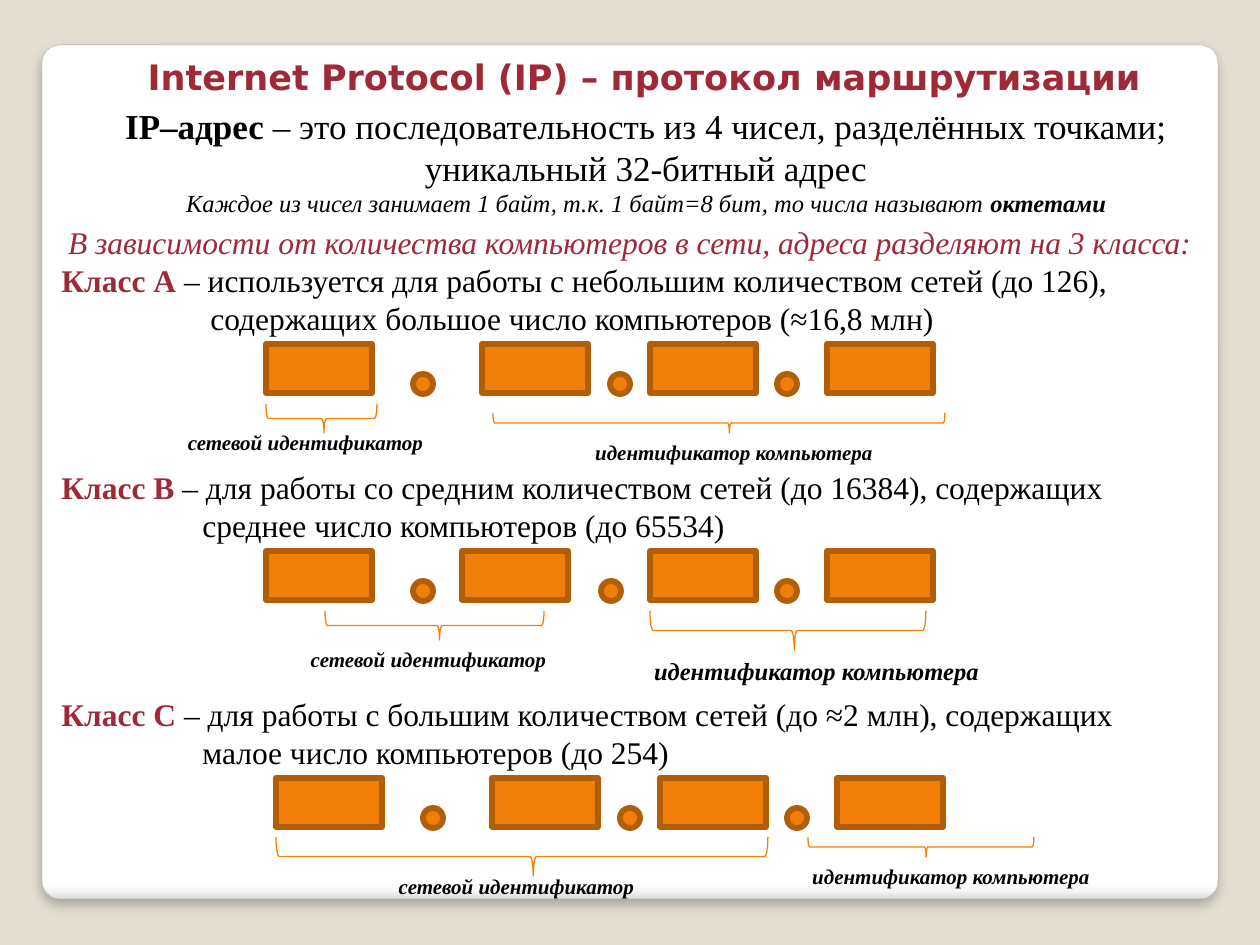
"""Build a slide on IP addresses and their three classes."""
from lxml.etree import fromstring
from pptx import Presentation
from pptx.dml.color import RGBColor
from pptx.enum.shapes import MSO_SHAPE
from pptx.enum.text import MSO_AUTO_SIZE, PP_ALIGN
from pptx.util import Emu, Pt

SAND = RGBColor(0xE3, 0xDE, 0xD1)
GREY = RGBColor(0xA4, 0xA4, 0xA4)
WINE = RGBColor(0x9F, 0x29, 0x36)
BLACK = RGBColor(0, 0, 0)
ORANGE = RGBColor(0xF0, 0x7F, 0x09)
BROWN = RGBColor(0xB2, 0x5E, 0x07)
AMBER = RGBColor(0xF9, 0x7F, 0x00)
SERIF, SANS = "Times New Roman", "DejaVu Sans"
SPACE = 'xmlns:a="http://schemas.openxmlformats.org/drawingml/2006/main"'
STOPS = ((0, "FFFFFF"), (98, "FFFFFF"), (99, "F7F7F7"), (100, "DADADA"))
NET, HOST = "сетевой идентификатор", "идентификатор компьютера"


def px(n):
    return Emu(round(n * 914400 / 126))


class Deck:
    def __init__(self):
        self.show = Presentation()
        self.show.slide_width, self.show.slide_height = px(1260), px(945)
        self.slide = self.show.slides.add_slide(self.show.slide_layouts[6])
        back = self.slide.background.fill
        back.solid()
        back.fore_color.rgb = SAND

    def shape(self, kind, box, fill, line, width):
        item = self.slide.shapes.add_shape(kind, *map(px, box))
        item.shadow.inherit = False
        if fill is None:
            item.fill.background()
        else:
            item.fill.solid()
            item.fill.fore_color.rgb = fill
        item.line.color.rgb = line
        item.line.width = Pt(width)
        return item

    def card(self, box):
        item = self.shape(MSO_SHAPE.ROUNDED_RECTANGLE, box, SAND, GREY, 0.16)
        item.adjustments[0] = 0.021
        props = item.element.spPr
        stops = "".join(f'<a:gs pos="{at * 1000}"><a:srgbClr val="{tint}"/></a:gs>'
                        for at, tint in STOPS)
        props.replace(props.find("{*}solidFill"), fromstring(
            f'<a:gradFill {SPACE}><a:gsLst>{stops}</a:gsLst>'
            '<a:lin ang="5400000" scaled="0"/></a:gradFill>'))
        props.find("{*}effectLst").append(fromstring(
            f'<a:outerShdw {SPACE} blurRad="{Pt(6)}" dist="{Pt(4)}" dir="5400000" '
            'algn="tl" rotWithShape="0"><a:srgbClr val="000000">'
            '<a:alpha val="25000"/></a:srgbClr></a:outerShdw>'))

    def octets(self, y, boxes, dots):
        for x in boxes:
            self.shape(MSO_SHAPE.RECTANGLE, (x, y, 106, 49), ORANGE, BROWN, 3.35)
        for x in dots:
            self.shape(MSO_SHAPE.FLOWCHART_CONNECTOR, (x, y + 30, 20, 20),
                       ORANGE, BROWN, 3.35)

    def brace(self, x, y, w, h):
        box = (x + (w - h) / 2, y + (h - w) / 2, h, w)
        item = self.shape(MSO_SHAPE.RIGHT_BRACE, box, None, AMBER, 0.75)
        item.adjustments[0], item.adjustments[1] = 0.083, 0.523
        item.rotation = 270
        item.element.spPr.xfrm.set("flipH", "1")

    def frame(self, box, wrap=True):
        frame = self.slide.shapes.add_textbox(*map(px, box)).text_frame
        frame.word_wrap = wrap
        frame.auto_size = MSO_AUTO_SIZE.SHAPE_TO_FIT_TEXT
        return frame

    def line(self, frame, size, *runs, color=BLACK, italic=False, face=SERIF,
             align=PP_ALIGN.CENTER, indent=0):
        para = frame.paragraphs[0]
        if para.runs:
            para = frame.add_paragraph()
        para.alignment = align
        font = para.font
        font.size, font.name, font.italic = Pt(size), face, italic
        font.color.rgb = color
        if indent:
            para._p.get_or_add_pPr().set("marL", str(px(indent)))
        for text, bold, *tint in runs:
            run = para.add_run()
            run.text = text
            run.font.bold = bold
            if tint:
                run.font.color.rgb = tint[0]

    def label(self, box, text, size=12):
        self.line(self.frame(box, False), size, (text, True), italic=True)

    def group(self, frame, name, first, second, indent):
        self.line(frame, 18, (name, True, WINE), (first, False), align=PP_ALIGN.LEFT)
        self.line(frame, 18, (second, False), align=PP_ALIGN.LEFT, indent=indent)


def main():
    deck = Deck()
    deck.card((42, 45, 1176, 854))
    deck.line(deck.frame((88, 49, 1113, 55)), 20,
              ("Internet Protocol (IP) – протокол маршрутизации", True),
              color=WINE, face=SANS)

    intro = deck.frame((108, 98, 1076, 127), False)
    deck.line(intro, 20, ("IP–адрес ", True),
              ("– это последовательность из 4 чисел, разделённых точками;", False))
    deck.line(intro, 20, ("уникальный 32-битный адрес", False))
    deck.line(intro, 14, ("Каждое из чисел занимает 1 байт, т.к. 1 байт=8 бит, "
                          "то числа называют ", False), ("октетами", True), italic=True)

    first = deck.frame((49, 217, 1162, 165))
    deck.line(first, 18, ("В зависимости от количества компьютеров в сети, "
                          "адреса разделяют на 3 класса:", False),
              color=WINE, italic=True)
    deck.group(first, "Класс А ",
               "– используется для работы с небольшим количеством сетей (до 126),",
               "содержащих большое число компьютеров (≈16,8 млн)", 149)
    deck.group(deck.frame((49, 462, 1142, 89)), "Класс B ",
               "– для работы со средним количеством сетей (до 16384), содержащих",
               "среднее число компьютеров (до 65534)", 141)
    deck.group(deck.frame((49, 689, 1113, 89)), "Класс C ",
               "– для работы с большим количеством сетей (до ≈2 млн), содержащих",
               "малое число компьютеров (до 254)", 141)

    deck.octets(344, (266, 482, 650, 827), (413, 610, 777))
    deck.octets(551, (266, 462, 650, 827), (413, 601, 777))
    deck.octets(778, (276, 492, 660, 837), (423, 620, 787))

    for box in ((266, 404, 111, 29), (493, 413, 452, 20),
                (325, 611, 219, 29), (650, 611, 276, 39),
                (276, 837, 492, 39), (808, 837, 226, 20)):
        deck.brace(*box)

    deck.label((158, 423, 295, 38), NET)
    deck.label((581, 433, 306, 38), HOST)
    deck.label((227, 640, 403, 38), NET)
    deck.label((640, 650, 353, 43), HOST, 14)
    deck.label((266, 867, 501, 38), NET)
    deck.label((798, 857, 306, 38), HOST)
    deck.show.save("out.pptx")


if __name__ == "__main__":
    main()
